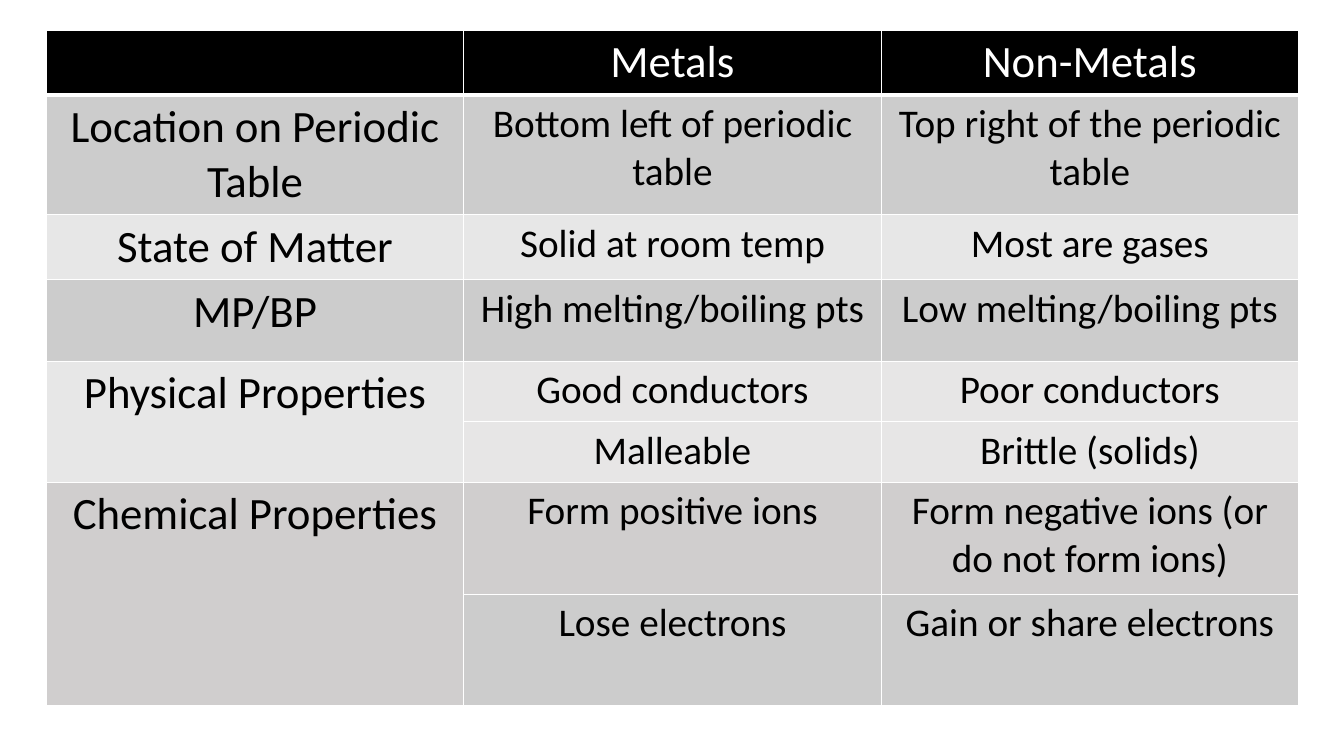
from dataclasses import dataclass

from lxml import etree
from pptx import Presentation
from pptx.dml.color import RGBColor
from pptx.enum.text import PP_ALIGN
from pptx.oxml.ns import qn
from pptx.slide import Slide
from pptx.table import Table, _Cell
from pptx.util import Inches, Pt

CENTER = PP_ALIGN.CENTER
BLANK_LAYOUT = 6
LEFT, TOP, COLUMN_WIDTH = 0.46, 0.3, 4.14


@dataclass(frozen=True)
class Theme:
    font: str = "Calibri"
    label_size: int = 32
    detail_size: int = 28
    black: str = "000000"
    white: str = "FFFFFF"
    gray: str = "CCCCCC"
    light: str = "E7E7E7"
    warm_light: str = "E7E6E6"
    warm_gray: str = "D0CECE"
    border: float = 1
    header_border: float = 3


THEME = Theme()


@dataclass(frozen=True)
class PropertyRow:
    label: str
    metals: str
    non_metals: str
    height: float
    label_fill: str
    detail_fill: str
    label_span: int = 1


ROWS = [
    PropertyRow("", "Metals", "Non-Metals", 0.6, THEME.black, THEME.black),
    PropertyRow("Location on Periodic Table", "Bottom left of periodic table",
                "Top right of the periodic table", 1.11, THEME.gray, THEME.gray),
    PropertyRow("State of Matter", "Solid at room temp", "Most are gases",
                0.6, THEME.light, THEME.light),
    PropertyRow("MP/BP", "High melting/boiling pts", "Low melting/boiling pts",
                0.81, THEME.gray, THEME.gray),
    PropertyRow("Physical Properties", "Good conductors", "Poor conductors",
                0.6, THEME.light, THEME.warm_light, 2),
    PropertyRow("", "Malleable", "Brittle (solids)", 0.6, THEME.light, THEME.warm_light),
    PropertyRow("Chemical Properties", "Form positive ions",
                "Form negative ions (or do not form ions)",
                1.11, THEME.warm_gray, THEME.warm_gray, 2),
    PropertyRow("", "Lose electrons", "Gain or share electrons",
                1.11, THEME.warm_gray, THEME.gray),
]


def set_borders(cell: _Cell, bottom_width: float) -> None:
    """Add white borders ahead of the fill, as the schema orders them."""
    properties = cell._tc.get_or_add_tcPr()
    widths = {"L": THEME.border, "R": THEME.border, "T": THEME.border, "B": bottom_width}
    for position, (side, width) in enumerate(widths.items()):
        line = etree.Element(qn(f"a:ln{side}"), w=str(Pt(width)))
        fill = etree.SubElement(line, qn("a:solidFill"))
        etree.SubElement(fill, qn("a:srgbClr"), val=THEME.white)
        properties.insert(position, line)


def write_cell(cell: _Cell, text: str, fill: str, size: int, is_header: bool) -> None:
    cell.fill.solid()
    cell.fill.fore_color.rgb = RGBColor.from_string(fill)
    set_borders(cell, THEME.header_border if is_header else THEME.border)
    paragraph = cell.text_frame.paragraphs[0]
    paragraph.alignment = CENTER
    if text:
        run = paragraph.add_run()
        run.text = text
        run.font.name = THEME.font
        run.font.size = Pt(size)
        run.font.bold = False
        color = THEME.white if is_header else THEME.black
        run.font.color.rgb = RGBColor.from_string(color)


def write_row(table: Table, index: int, row: PropertyRow) -> None:
    is_header = index == 0
    table.rows[index].height = Inches(row.height)
    detail_size = THEME.label_size if is_header else THEME.detail_size
    write_cell(table.cell(index, 0), row.label, row.label_fill, THEME.label_size, is_header)
    for column, detail in enumerate((row.metals, row.non_metals), start=1):
        write_cell(table.cell(index, column), detail, row.detail_fill, detail_size, is_header)
    if row.label_span > 1:
        table.cell(index, 0).merge(table.cell(index + row.label_span - 1, 0))


def add_comparison(slide: Slide) -> None:
    height = sum(row.height for row in ROWS)
    table = slide.shapes.add_table(
        len(ROWS), 3, Inches(LEFT), Inches(TOP),
        Inches(3 * COLUMN_WIDTH), Inches(height)).table
    table.first_row = False
    table.horz_banding = False
    for column in table.columns:
        column.width = Inches(COLUMN_WIDTH)
    for index, row in enumerate(ROWS):
        write_row(table, index, row)


def main() -> None:
    presentation = Presentation()
    presentation.slide_width = Inches(13.33)
    presentation.slide_height = Inches(7.5)
    slide = presentation.slides.add_slide(presentation.slide_layouts[BLANK_LAYOUT])
    add_comparison(slide)
    presentation.save("out.pptx")


if __name__ == "__main__":
    main()
